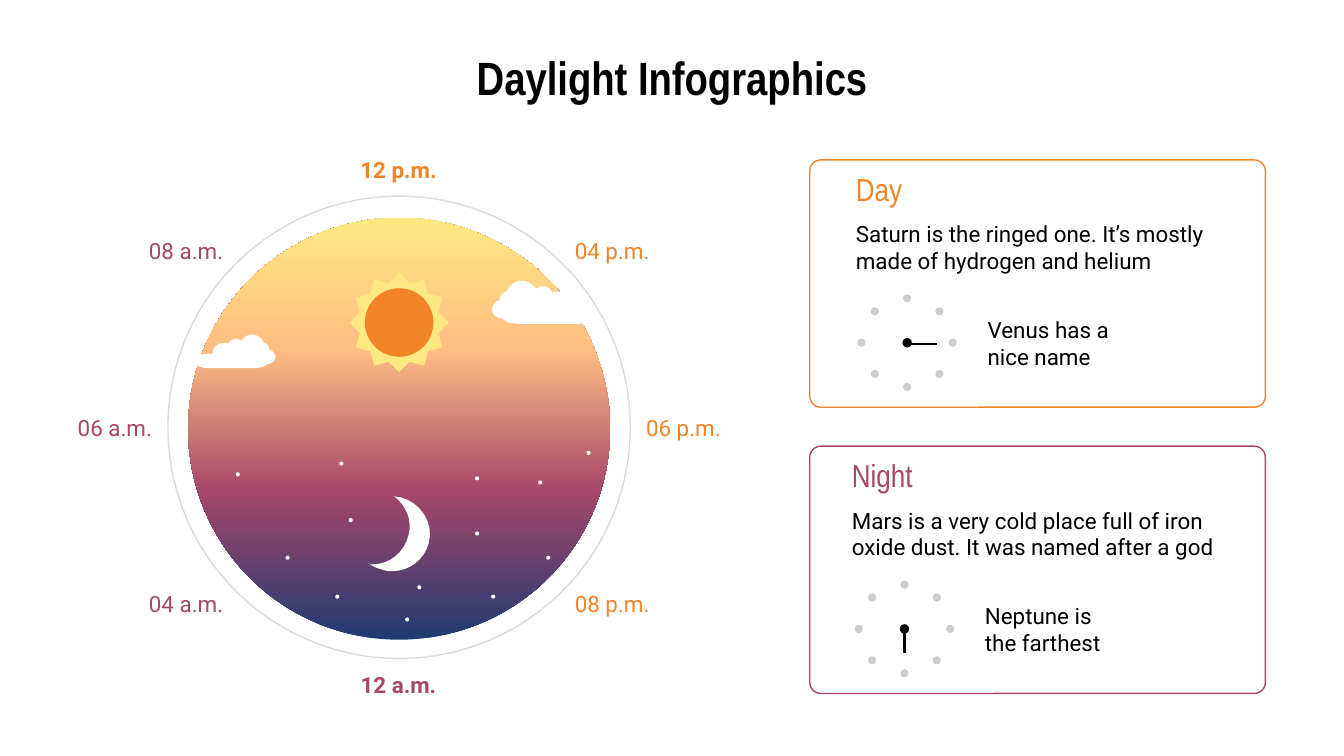
"""Build the Daylight Infographics slide."""
from dataclasses import dataclass
from math import cos, pi, sin

from lxml import etree
from pptx import Presentation
from pptx import util as u
from pptx.dml.color import RGBColor
from pptx.enum import shapes, text
from pptx.oxml import ns

ORANGE, PLUM, YELLOW = "F28428", "A64669", "FFE882"
BLACK, WHITE, GREY, RING_GREY = "000000", "FFFFFF", "CCCCCC", "D9D9D9"
HEADING_FONT, BODY_FONT = "Arial Narrow", "Roboto"
DIAL_X, DIAL_Y = 2.97, 3.18
SKY = [(0, "1F3B73"), (35, PLUM), (69, "FFBE82"), (100, YELLOW)]
STARS = [(2.51, 4.44), (2.14, 4.15), (3.55, 3.56), (3.55, 3.97), (2.54, 3.45), (2.61, 3.87),
         (4.02, 3.59), (1.77, 3.53), (3.67, 4.44), (4.38, 3.37), (4.08, 4.15), (3.03, 4.61), (3.12, 4.37)]
MOON = [(2.93, 3.69),
        (3.02, 3.76), (3.07, 3.87), (3.04, 3.98), (3.01, 4.11), (2.9, 4.2), (2.77, 4.2),
        (2.76, 4.2), (2.75, 4.2), (2.74, 4.19), (2.78, 4.22), (2.81, 4.23), (2.85, 4.24),
        (2.87, 4.25), (2.9, 4.25), (2.92, 4.25), (3.05, 4.25), (3.16, 4.16), (3.19, 4.04),
        (3.23, 3.89), (3.13, 3.74), (2.98, 3.7), (2.96, 3.7), (2.95, 3.7), (2.93, 3.69)]
CLOUD = [(0.22, 0),
         (0.18, 0), (0.13, 0.03), (0.11, 0.08), (0.09, 0.08), (0.06, 0.1), (0.06, 0.14),
         (0.03, 0.15), (0, 0.18), (0, 0.22), (0.01, 0.26), (0.04, 0.28), (0.08, 0.28),
         (0.1, 0.31), (0.15, 0.32), (0.23, 0.32), (0.33, 0.32), (0.43, 0.32), (0.53, 0.32),
         (0.56, 0.32), (0.59, 0.32), (0.64, 0.32), (0.72, 0.32), (0.78, 0.29), (0.78, 0.25),
         (0.78, 0.21), (0.72, 0.18), (0.6, 0.18), (0.6, 0.12), (0.55, 0.08), (0.5, 0.08),
         (0.48, 0.08), (0.46, 0.08), (0.45, 0.09), (0.44, 0.06), (0.41, 0.04), (0.38, 0.04),
         (0.36, 0.04), (0.34, 0.05), (0.33, 0.06), (0.3, 0.02), (0.26, 0), (0.22, 0)]


@dataclass
class HourLabel:
    caption: str
    dx: float
    dy: float
    color: str
    bold: bool = False


@dataclass
class Card:
    top: float
    color: str
    heading: str
    body: str
    note: str
    text_left: float
    note_left: float
    clock: tuple[float, float]
    hand: tuple[float, float, float, float]


HOURS = [HourLabel("12 p.m.", 0, -1.92, ORANGE, True), HourLabel("12 a.m.", 0, 1.91, PLUM, True),
         HourLabel("04 p.m.", 1.59, -1.32, ORANGE), HourLabel("06 a.m.", -2.11, 0, PLUM),
         HourLabel("08 a.m.", -1.58, -1.32, PLUM), HourLabel("06 p.m.", 2.12, 0, ORANGE),
         HourLabel("08 p.m.", 1.59, 1.31, ORANGE), HourLabel("04 a.m.", -1.58, 1.31, PLUM)]
CARDS = [Card(1.19, ORANGE, "Day", "Saturn is the ringed one. It’s mostly made of hydrogen and helium",
              "Venus has a nice name", 6.27, 7.25, (6.75, 2.55), (6.97, 2.56, 6.78, 2.56)),
         Card(3.32, PLUM, "Night", "Mars is a very cold place full of iron oxide dust. It was named after a god",
              "Neptune is the farthest", 6.24, 7.23, (6.73, 4.68), (6.73, 4.86, 6.73, 4.71))]


def rgb(color: str) -> RGBColor:
    return RGBColor.from_string(color)


def paint(shape, fill: str | None = None, line: str | None = None) -> None:
    shape.shadow.inherit = False
    if fill:
        shape.fill.solid()
        shape.fill.fore_color.rgb = rgb(fill)
    else:
        shape.fill.background()
    if line:
        shape.line.color.rgb = rgb(line)
        shape.line.width = u.Pt(0.75)
    else:
        shape.line.fill.background()


def add_centered(group, kind, x: float, y: float, width: float, height: float,
                 fill: str | None = None, line: str | None = None):
    shape = group.shapes.add_shape(kind, u.Inches(x - width / 2), u.Inches(y - height / 2),
                                   u.Inches(width), u.Inches(height))
    paint(shape, fill, line)
    return shape


def add_curve(group, points: list[tuple[float, float]], fill: str, steps: int = 8) -> None:
    outline = []
    for index in range(0, len(points) - 1, 3):
        a, b, c, d = points[index:index + 4]
        for step in range(1, steps + 1):
            t = step / steps
            s = 1 - t
            outline.append(tuple(u.Inches(s**3 * p + 3 * s * s * t * q + 3 * s * t * t * r + t**3 * v)
                                 for p, q, r, v in zip(a, b, c, d)))
    builder = group.shapes.build_freeform(*outline[-1])
    builder.add_line_segments(outline, close=True)
    paint(builder.convert_to_shape(), fill)


def write(frame, caption: str, size: float, font: str, color: str, bold: bool = False,
          align=text.PP_ALIGN.LEFT, anchor=text.MSO_ANCHOR.TOP) -> None:
    frame.word_wrap = True
    frame.auto_size = text.MSO_AUTO_SIZE.NONE
    frame.vertical_anchor = anchor
    frame.margin_left = frame.margin_right = frame.margin_top = frame.margin_bottom = u.Inches(0.1)
    frame.text = caption
    paragraph = frame.paragraphs[0]
    paragraph.alignment = align
    paragraph.font.size = u.Pt(size)
    paragraph.font.name = font
    paragraph.font.bold = bold
    paragraph.font.color.rgb = rgb(color)


def add_text(group, left: float, top: float, width: float, height: float, caption: str, **style) -> None:
    box = group.shapes.add_textbox(u.Inches(left), u.Inches(top), u.Inches(width), u.Inches(height))
    write(box.text_frame, caption, **style)


def fill_sky(shape) -> None:
    shape.fill.gradient()
    shape.fill.gradient_angle = 90
    stops = shape.fill._xPr.find(ns.qn("a:gradFill")).find(ns.qn("a:gsLst"))
    for stop in list(stops):
        stops.remove(stop)
    for position, color in SKY:
        stop = etree.SubElement(stops, ns.qn("a:gs"), pos=str(position * 1000))
        etree.SubElement(stop, ns.qn("a:srgbClr"), val=color)


def add_dial(slide) -> None:
    group = slide.shapes.add_group_shape()
    oval = shapes.MSO_SHAPE.OVAL
    add_centered(group, oval, DIAL_X, DIAL_Y, 3.44, 3.44, line=RING_GREY)
    fill_sky(add_centered(group, oval, DIAL_X, DIAL_Y + 0.01, 3.14, 3.14))
    for x, y in STARS:
        add_centered(group, oval, x, y, 0.03, 0.03, WHITE)
    add_curve(group, MOON, WHITE)
    rays = add_centered(group, shapes.MSO_SHAPE.STAR_12_POINT, DIAL_X, 2.4, 0.74, 0.74, YELLOW)
    rays.adjustments[0] = 0.41
    add_centered(group, oval, DIAL_X, 2.4, 0.51, 0.51, ORANGE)
    for left, top, scale_x, scale_y in [(3.66, 2.09, 1, 1), (2.05, 2.49, -0.78, 0.78)]:
        add_curve(group, [(left + x * scale_x, top + y * scale_y) for x, y in CLOUD], WHITE)
    for hour in HOURS:
        add_text(group, DIAL_X + hour.dx - 0.41, DIAL_Y + hour.dy - 0.16, 0.81, 0.33, hour.caption,
                 size=12, font=BODY_FONT, color=hour.color, bold=hour.bold,
                 align=text.PP_ALIGN.CENTER, anchor=text.MSO_ANCHOR.MIDDLE)


def add_card(slide, card: Card) -> None:
    group = slide.shapes.add_group_shape()
    frame = add_centered(group, shapes.MSO_SHAPE.ROUNDED_RECTANGLE, 7.72, card.top + 0.92, 3.39, 1.84,
                         line=card.color)
    frame.adjustments[0] = 0.045
    body = {"size": 12, "font": BODY_FONT, "color": BLACK}
    add_text(group, card.text_left, card.top + 0.35, 3.14, 0.6, card.body, **body)
    add_text(group, card.text_left, card.top - 0.03, 2.82, 0.38, card.heading,
             size=17, font=HEADING_FONT, color=card.color)
    add_text(group, card.note_left, card.top + 1.06, 1.15, 0.6, card.note, **body)
    x, y = card.clock
    add_centered(group, shapes.MSO_SHAPE.OVAL, x, y, 0.07, 0.07, BLACK)
    for index in range(8):
        angle = index * pi / 4
        add_centered(group, shapes.MSO_SHAPE.OVAL, x + 0.34 * cos(angle), y + 0.33 * sin(angle),
                     0.06, 0.06, GREY)
    hand = group.shapes.add_connector(shapes.MSO_CONNECTOR.STRAIGHT, *map(u.Inches, card.hand))
    hand.line.color.rgb = rgb(BLACK)
    hand.line.width = u.Pt(1.5)
    etree.SubElement(hand._element.spPr, ns.qn("a:effectLst"))


def main() -> None:
    presentation = Presentation()
    presentation.slide_width = u.Inches(10)
    presentation.slide_height = presentation.slide_width * 9 // 16
    slide = presentation.slides.add_slide(presentation.slide_layouts[5])
    title = slide.shapes.title
    title.left, title.top, title.width, title.height = map(u.Inches, (0.45, 0.26, 9.1, 0.63))
    write(title.text_frame, "Daylight Infographics", 25, HEADING_FONT, BLACK, True, text.PP_ALIGN.CENTER)
    add_dial(slide)
    for card in CARDS:
        add_card(slide, card)
    presentation.save("out.pptx")


if __name__ == "__main__":
    main()
